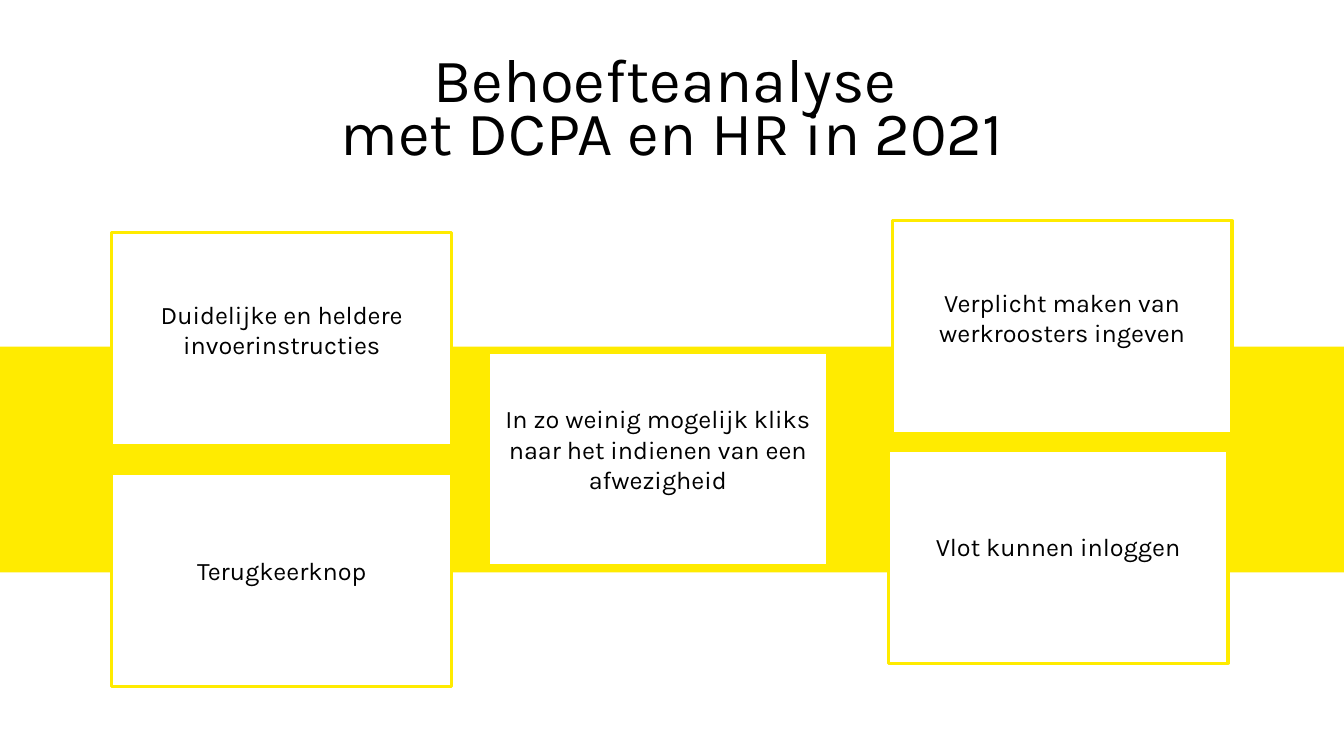
import pptx
import pptx.dml.color
import pptx.enum.shapes
import pptx.enum.text
import pptx.util

Inches = pptx.util.Inches
Pt = pptx.util.Pt

COLORS = {"yellow": "FFEB00", "white": "FFFFFF", "black": "000000"}
FONT = "Karla"
SLIDE_WIDTH, SLIDE_HEIGHT = 13.33, 7.5
CARD_WIDTH, CARD_HEIGHT = 3.37, 2.11
CARDS = [
    (1.11, 2.31, "Duidelijke en heldere invoerinstructies"),
    (8.85, 2.19, "Verplicht maken van werkroosters ingeven"),
    (4.84, 3.5, "In zo weinig mogelijk kliks naar het indienen van een afwezigheid"),
    (1.11, 4.7, "Terugkeerknop"),
    (8.81, 4.47, "Vlot kunnen inloggen"),
]


def color(name):
    return pptx.dml.color.RGBColor.from_string(COLORS[name])


def write_text(shape, text, size, margins, line_spacing=None):
    """Fill a shape with centred text; margins are left, top, right, bottom."""
    left, top, right, bottom = map(Inches, margins)
    frame = shape.text_frame
    frame.text = text
    paragraph = frame.paragraphs[0]
    formats = [
        (frame, {
            "word_wrap": True,
            "auto_size": pptx.enum.text.MSO_AUTO_SIZE.NONE,
            "vertical_anchor": pptx.enum.text.MSO_ANCHOR.MIDDLE,
            "margin_left": left, "margin_top": top,
            "margin_right": right, "margin_bottom": bottom,
        }),
        (paragraph, {
            "alignment": pptx.enum.text.PP_ALIGN.CENTER,
            "line_spacing": line_spacing,
        }),
    ]
    for run in paragraph.runs:
        formats.append((run.font, {"name": FONT, "size": Pt(size)}))
        run.font.color.rgb = color("black")
    for target, values in formats:
        for name, value in values.items():
            setattr(target, name, value)


def add_rectangle(slide, box, fill):
    shape = slide.shapes.add_shape(
        pptx.enum.shapes.MSO_SHAPE.RECTANGLE, *map(Inches, box))
    shape.shadow.inherit = False
    shape.fill.solid()
    shape.fill.fore_color.rgb = color(fill)
    return shape


def add_band(slide, box):
    band = add_rectangle(slide, box, "yellow")
    band.line.fill.background()


def place_title(slide, box, text):
    title = slide.shapes.title
    for name, value in zip(("left", "top", "width", "height"), box):
        setattr(title, name, Inches(value))
    write_text(title, text, 44, (0, 0, 0, 0), Pt(38))


def add_card(slide, box, text):
    card = add_rectangle(slide, box, "white")
    card.line.color.rgb = color("yellow")
    card.line.width = Pt(2.25)
    write_text(card, text, 18, (0.12, 0, 0.12, 0.2))


def main():
    presentation = pptx.Presentation()
    presentation.slide_width = Inches(SLIDE_WIDTH)
    presentation.slide_height = Inches(SLIDE_HEIGHT)
    title_only = presentation.slide_layouts.get_by_name("Title Only")
    slide = presentation.slides.add_slide(title_only)
    add_band(slide, (0, 3.44, SLIDE_WIDTH, 2.24))
    place_title(slide, (0.41, 0.47, 12.52, 1.33),
                "Behoefteanalyse \vmet DCPA en HR in 2021")
    for left, top, text in CARDS:
        add_card(slide, (left, top, CARD_WIDTH, CARD_HEIGHT), text)
    presentation.save("out.pptx")


if __name__ == "__main__":
    main()
